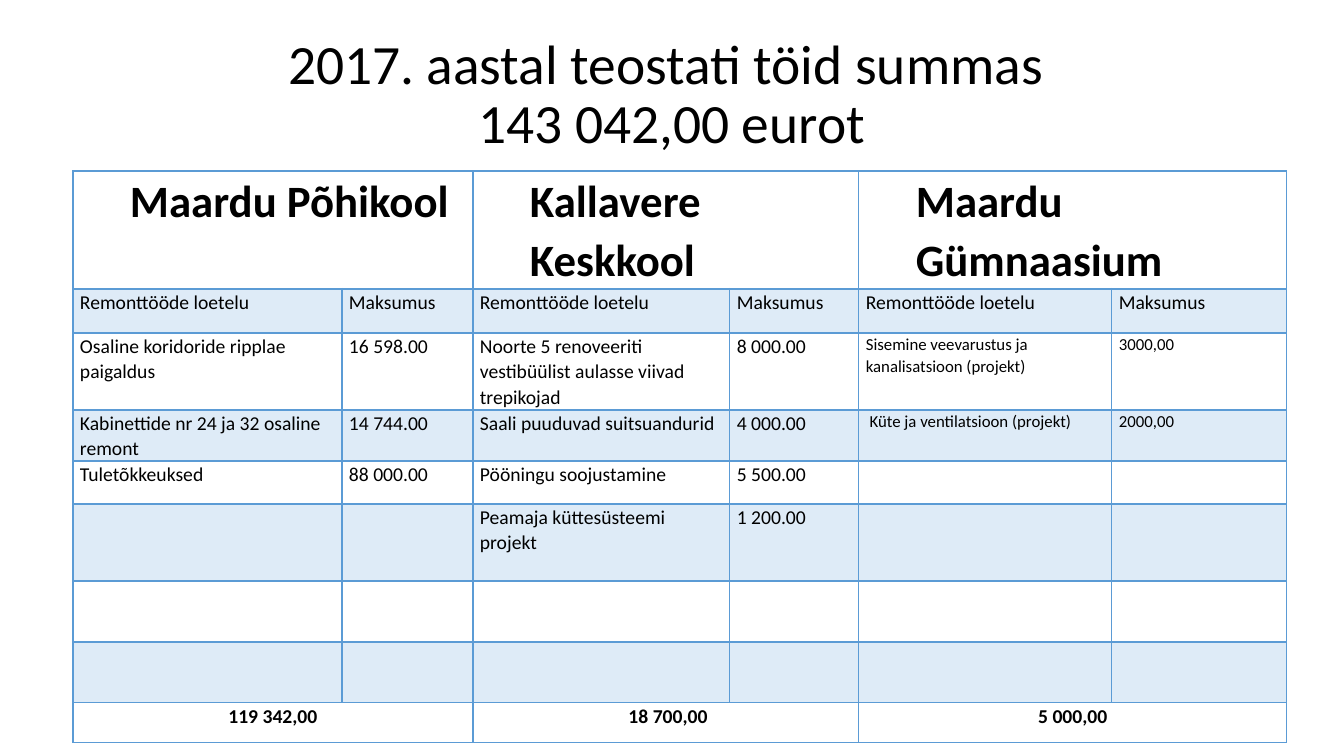
from lxml import etree
from pptx import Presentation
from pptx import util as u
from pptx.dml.color import RGBColor
from pptx.enum import text
from pptx.oxml import ns

EMU_PER_PX = 12192000 / 1344
FONT = "Calibri"
BLACK, BLUE, PALE_BLUE = "000000", "5B9BD5", "DEEBF7"

COLUMN_WIDTHS = [269, 131, 257, 129, 253, 175]
ROW_HEIGHTS = [118, 44, 77, 51, 43, 77, 61, 61, 40]
SCHOOLS = ["Maardu Põhikool", "Kallavere Keskkool", "Maardu Gümnaasium"]
TOTALS = ["119 342,00", " 18 700,00", "5 000,00"]
WORKS = [
    ["Remonttööde loetelu", "Maksumus"] * 3,
    ["Osaline koridoride ripplae paigaldus", "16 598.00",
     "Noorte 5 renoveeriti vestibüülist aulasse viivad trepikojad", "8 000.00",
     "Sisemine veevarustus ja kanalisatsioon (projekt)", "3000,00"],
    ["Kabinettide nr 24 ja 32 osaline remont", "14 744.00",
     "Saali puuduvad suitsuandurid", "4 000.00",
     " Küte ja ventilatsioon (projekt)", "2000,00"],
    ["Tuletõkkeuksed", "88 000.00", "Pööningu soojustamine", "5 500.00", "", ""],
    ["", "", "Peamaja küttesüsteemi projekt", "1 200.00", "", ""],
]


def px(length):
    return u.Emu(round(length * EMU_PER_PX))


def color(code):
    return RGBColor.from_string(code)


def write(para, words, size, bold=False, spacing=1.07, align=text.PP_ALIGN.LEFT):
    para.text = words
    para.alignment = align
    para.line_spacing = spacing
    for span in para.runs:
        span.font.name = FONT
        span.font.size = u.Pt(size)
        span.font.bold = bold
        span.font.color.rgb = color(BLACK)


def set_borders(cell, bottom_width=1):
    """Draw blue lines on all four sides of a cell."""
    properties = cell._tc.get_or_add_tcPr()
    widths = {"lnL": 1, "lnR": 1, "lnT": 1, "lnB": bottom_width}
    for index, (side, width) in enumerate(widths.items()):
        line = etree.Element(ns.qn("a:" + side), w=str(u.Pt(width)))
        fill = etree.SubElement(line, ns.qn("a:solidFill"))
        etree.SubElement(fill, ns.qn("a:srgbClr"), val=BLUE)
        properties.insert(index, line)


def style_cell(cell, shaded, bottom_width):
    cell.margin_left = cell.margin_right = px(7)
    cell.margin_top = cell.margin_bottom = 0
    if shaded:
        cell.fill.solid()
        cell.fill.fore_color.rgb = color(PALE_BLUE)
    else:
        cell.fill.background()
    set_borders(cell, bottom_width)


def add_title(page):
    box = page.shapes.add_textbox(px(92), px(40), px(1160), px(112))
    frame = box.text_frame
    frame.word_wrap = True
    frame.vertical_anchor = text.MSO_ANCHOR.MIDDLE
    write(frame.paragraphs[0], "2017. aastal teostati töid summas \v143 042,00 eurot",
          39.6, spacing=0.9, align=text.PP_ALIGN.CENTER)


def add_grid(page):
    frame = page.shapes.add_table(len(ROW_HEIGHTS), len(COLUMN_WIDTHS), px(73), px(171),
                                  px(sum(COLUMN_WIDTHS)), px(sum(ROW_HEIGHTS)))
    table = frame.table
    table.first_row = table.horz_banding = False
    for column, width in zip(table.columns, COLUMN_WIDTHS):
        column.width = px(width)
    for index, (row, height) in enumerate(zip(table.rows, ROW_HEIGHTS)):
        row.height = px(height)
        for cell in row.cells:
            style_cell(cell, shaded=index % 2 == 1, bottom_width=2 if index == 0 else 1)
    return table


def merge_pair(table, row, school):
    """Join the two columns of one school and return the joined cell's paragraph."""
    cell = table.cell(row, 2 * school)
    cell.merge(table.cell(row, 2 * school + 1))
    return cell.text_frame.paragraphs[0]


def fill_table(table):
    last = len(ROW_HEIGHTS) - 1
    for school, (name, total) in enumerate(zip(SCHOOLS, TOTALS)):
        heading = merge_pair(table, 0, school)
        write(heading, name, 32, bold=True)
        heading._p.get_or_add_pPr().set("marL", str(px(50)))
        write(merge_pair(table, last, school), total, 14, bold=True,
              align=text.PP_ALIGN.CENTER)
    for row, entries in enumerate(WORKS, start=1):
        for column, entry in enumerate(entries):
            if entry:
                size = 12 if row > 1 and column > 3 else 14
                write(table.cell(row, column).text_frame.paragraphs[0], entry, size)


def main():
    deck = Presentation()
    deck.slide_width, deck.slide_height = px(1344), px(756)
    page = deck.slides.add_slide(deck.slide_layouts[6])
    add_title(page)
    fill_table(add_grid(page))
    deck.save("out.pptx")


if __name__ == "__main__":
    main()
